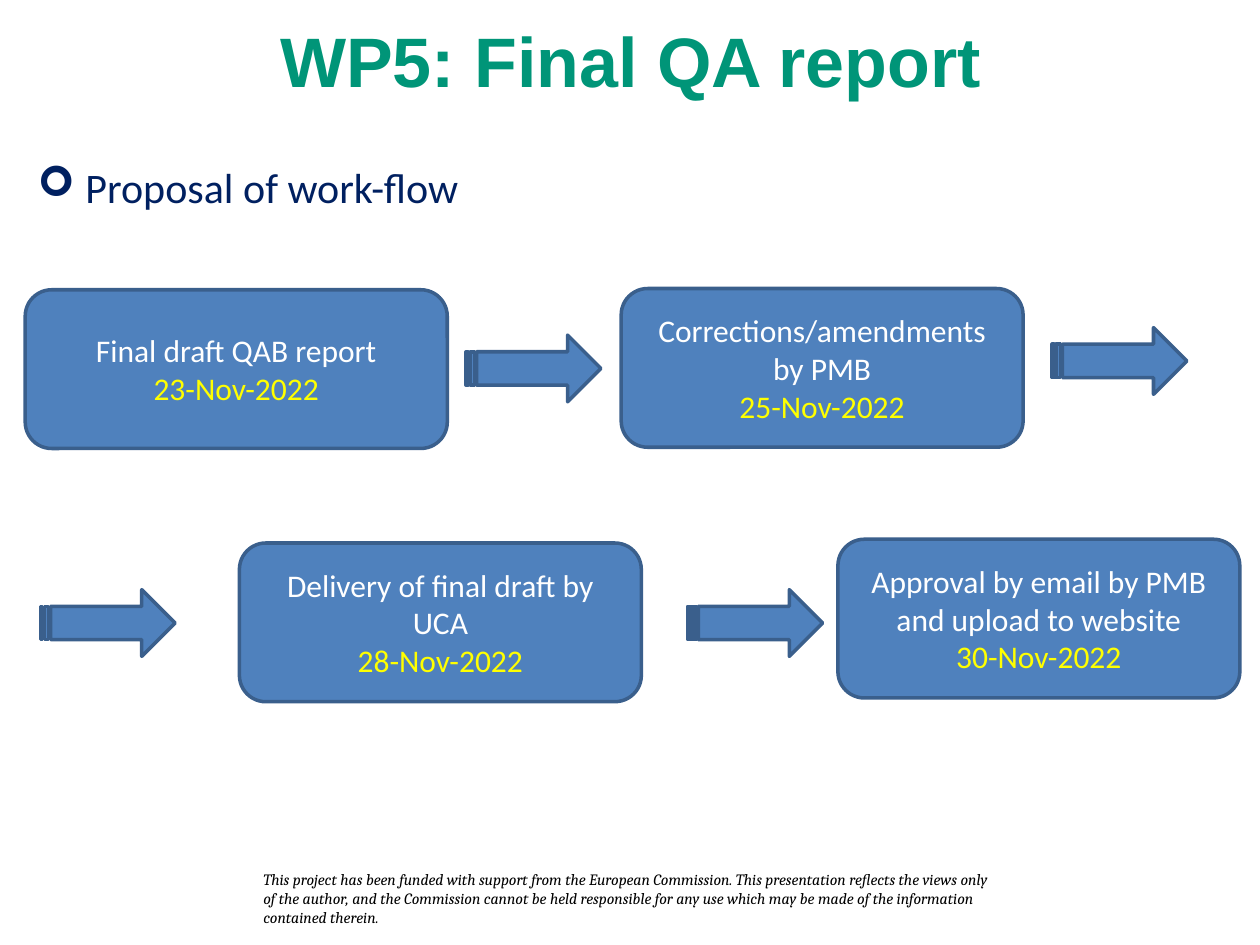
from dataclasses import dataclass

from lxml import etree
from pptx import Presentation
from pptx.dml.color import RGBColor
from pptx.enum.shapes import MSO_SHAPE
from pptx.enum.text import MSO_ANCHOR, PP_ALIGN
from pptx.oxml.ns import qn
from pptx.util import Inches, Pt

ROUNDED = MSO_SHAPE.ROUNDED_RECTANGLE
ARROW = MSO_SHAPE.STRIPED_RIGHT_ARROW
MIDDLE = MSO_ANCHOR.MIDDLE
CENTER = PP_ALIGN.CENTER
TITLE_ONLY = 5


@dataclass(frozen=True)
class Theme:
    """Colours, fonts and type sizes of the slide."""
    title: str = "009578"
    lead: str = "002060"
    fill: str = "4F81BD"
    line: str = "3A5F8C"
    step: str = "FFFFFF"
    date: str = "FFFF00"
    note: str = "000000"
    title_font: str = "Arial"
    body_font: str = "Calibri"
    note_font: str = "Cambria"
    title_size: int = 40
    lead_size: int = 24
    step_size: int = 18
    note_size: int = 9
    line_width: int = 2


THEME = Theme()
STEP_H = 1.26
STEPS = [
    ((0.2, 2.3, 3.35, STEP_H), "Final draft QAB report", "23-Nov-2022"),
    ((4.93, 2.29, 3.19, STEP_H), "Corrections/amendments by PMB", "25-Nov-2022"),
    ((1.9, 4.31, 3.19, STEP_H), "Delivery of final draft by UCA", "28-Nov-2022"),
    ((6.65, 4.28, 3.19, STEP_H), "Approval by email by PMB and upload to website",
     "30-Nov-2022"),
]
ARROW_SIZE = (1.07, 0.53)
ARROWS = [(3.7, 2.66), (8.35, 2.6), (0.32, 4.68), (5.46, 4.68)]
NOTE = ("This project has been funded with support from the European Commission. "
        "This presentation reflects the views only of the author, and the Commission "
        "cannot be held responsible for any use which may be made of the information "
        "contained therein.")


def inches(box):
    """Turn a box of numbers into lengths."""
    return [Inches(v) for v in box]


def add_run(p, text, font, size, color, bold=False, italic=False):
    """Add one formatted run to a paragraph."""
    r = p.add_run()
    r.text = text
    r.font.name = font
    r.font.size = Pt(size)
    r.font.bold = bold
    r.font.italic = italic
    r.font.color.rgb = RGBColor.from_string(color)


def add_title(s, box, text):
    """Place and format the title placeholder."""
    sp = s.shapes.title
    sp.left, sp.top, sp.width, sp.height = inches(box)
    tf = sp.text_frame
    tf.vertical_anchor = MIDDLE
    p = tf.paragraphs[0]
    p.alignment = CENTER
    add_run(p, text, THEME.title_font, THEME.title_size, THEME.title, bold=True)


def add_lead(s, box, text):
    """Add the bulleted lead line."""
    tf = s.shapes.add_textbox(*inches(box)).text_frame
    tf.word_wrap = True
    p = tf.paragraphs[0]
    pPr = p._p.get_or_add_pPr()
    pPr.set("marL", str(Inches(0.38)))
    pPr.set("indent", str(-Inches(0.38)))
    etree.SubElement(pPr, qn("a:buFont")).set("typeface", "Wingdings")
    etree.SubElement(pPr, qn("a:buChar")).set("char", "➢")
    add_run(p, text, THEME.body_font, THEME.lead_size, THEME.lead)


def add_block(s, kind, box):
    """Add a filled and outlined preset shape."""
    sp = s.shapes.add_shape(kind, *inches(box))
    sp.shadow.inherit = False
    sp.fill.solid()
    sp.fill.fore_color.rgb = RGBColor.from_string(THEME.fill)
    sp.line.color.rgb = RGBColor.from_string(THEME.line)
    sp.line.width = Pt(THEME.line_width)
    return sp


def add_step(s, box, label, date):
    """Add a workflow step with its date."""
    tf = add_block(s, ROUNDED, box).text_frame
    tf.word_wrap = True
    tf.vertical_anchor = MIDDLE
    lines = [(tf.paragraphs[0], label, THEME.step), (tf.add_paragraph(), date, THEME.date)]
    for p, text, color in lines:
        p.alignment = CENTER
        add_run(p, text, THEME.body_font, THEME.step_size, color)


def add_workflow(s):
    """Add the arrows and the steps they link."""
    for place in ARROWS:
        add_block(s, ARROW, place + ARROW_SIZE)
    for step in STEPS:
        add_step(s, *step)


def add_note(s, box, text):
    """Add the funding note at the foot."""
    tf = s.shapes.add_textbox(*inches(box)).text_frame
    tf.word_wrap = True
    tf.margin_left = tf.margin_top = tf.margin_right = tf.margin_bottom = 0
    add_run(tf.paragraphs[0], text, THEME.note_font, THEME.note_size, THEME.note, italic=True)


def main():
    """Build and save the slide."""
    prs = Presentation()
    prs.slide_width, prs.slide_height = Inches(10), Inches(7.5)
    s = prs.slides.add_slide(prs.slide_layouts[TITLE_ONLY])
    add_title(s, (0.32, 0.15, 9.37, 0.64), "WP5: Final QA report")
    add_lead(s, (0.2, 1.23, 9.21, 0.64), "Proposal of work-flow")
    add_workflow(s)
    add_note(s, (2.09, 6.9, 5.77, 0.45), NOTE)
    prs.save("out.pptx")


if __name__ == "__main__":
    main()
